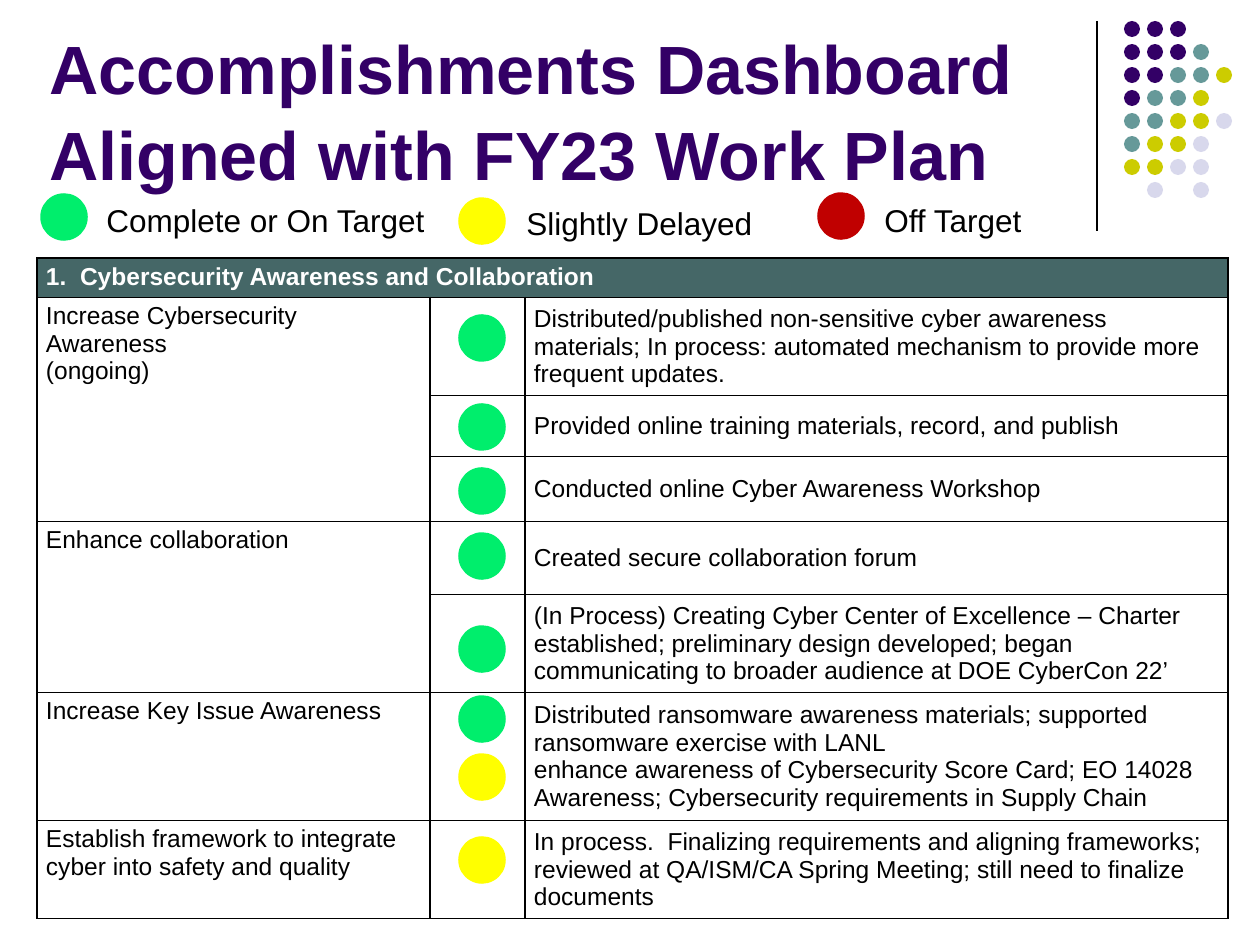
from lxml.etree import SubElement
from pptx import Presentation
from pptx.dml.color import RGBColor
from pptx.enum.shapes import MSO_CONNECTOR, MSO_SHAPE
from pptx.enum.text import MSO_ANCHOR, MSO_AUTO_SIZE, PP_ALIGN
from pptx.oxml.ns import qn
from pptx.util import Emu, Pt

# Content
TITLE = "Accomplishments Dashboard Aligned with FY23 Work Plan"
# label, status, light (x, y), label (x, y, width)
LEGEND = [
    ("Complete or On Target", "done", (42, 195), (94, 195, 346)),
    ("Slightly Delayed", "delayed", (460, 199), (514, 198, 253)),
    ("Off Target", "off", (819, 194), (872, 195, 164)),
]
SECTION = "1.  Cybersecurity Awareness and Collaboration"
# goal, [(accomplishment, row height, [(status, light y)])]
GOALS = [
    ("Increase Cybersecurity Awareness\n(ongoing)", [
        ("Distributed/published non-sensitive cyber awareness materials; In process: "
         "automated mechanism to provide more frequent updates.", 96, [("done", 316)]),
        ("Provided online training materials, record, and publish", 61, [("done", 405)]),
        ("Conducted online Cyber Awareness Workshop", 65, [("done", 469)]),
    ]),
    ("Enhance collaboration", [
        ("Created secure collaboration forum", 73, [("done", 534)]),
        ("(In Process) Creating Cyber Center of Excellence – Charter established; "
         "preliminary design developed; began communicating to broader audience at "
         "DOE CyberCon 22’", 97, [("done", 627)]),
    ]),
    ("Increase Key Issue Awareness", [
        ("Distributed ransomware awareness materials; supported ransomware exercise "
         "with LANL\nenhance awareness of Cybersecurity Score Card; EO 14028 Awareness; "
         "Cybersecurity requirements in Supply Chain", 119,
         [("done", 697), ("delayed", 755)]),
    ]),
    ("Establish framework to integrate cyber into safety and quality", [
        ("In process.  Finalizing requirements and aligning frameworks; reviewed at "
         "QA/ISM/CA Spring Meeting; still need to finalize documents", 92,
         [("delayed", 838)]),
    ]),
]
# Corner ornament: purple, teal, olive, mist; "." is a gap
DOTS = ["PPP", "PPPT", "PPTTO", "PTTO", "TTOOM", "TOOM", "OOMM", ".M.M"]

THEME = {
    "font": "Arial", "title_size": Pt(39), "label_size": Pt(18), "cell_size": Pt(14),
    "title": "330066", "text": "000000", "header": "456767", "paper": "FFFFFF",
    "done": "00EE6C", "delayed": "FFFF00", "off": "C00000",
    "P": "330066", "T": "669999", "O": "CCCC00", "M": "D8D8EC",
}
LIGHT = 44
LIGHT_X = 460
HEADER_HEIGHT = 39
COLUMNS = [393, 95, 703]


def px(n):
    return Emu(round(n * 914400 / 126))


def box(*lengths):
    return [px(n) for n in lengths]


def color(name):
    return RGBColor.from_string(THEME[name])


def style(frame, size, ink="text", bold=False):
    for paragraph in frame.paragraphs:
        paragraph.alignment = PP_ALIGN.LEFT
        font = paragraph.font
        font.name, font.size, font.bold = THEME["font"], THEME[size], bold
        font.color.rgb = color(ink)


def add_circle(slide, x, y, size, fill, outlined=False):
    circle = slide.shapes.add_shape(MSO_SHAPE.OVAL, *box(x, y, size, size))
    circle.shadow.inherit = False
    circle.fill.solid()
    circle.fill.fore_color.rgb = color(fill)
    if outlined:
        circle.line.color.rgb = color(fill)
        circle.line.width = Pt(2)
    else:
        circle.line.fill.background()


def add_borders(cell):
    properties = cell._tc.get_or_add_tcPr()
    for position, side in enumerate(("lnL", "lnR", "lnT", "lnB")):
        border = SubElement(properties, qn("a:" + side), w=str(Pt(1)))
        fill = SubElement(border, qn("a:solidFill"))
        SubElement(fill, qn("a:srgbClr"), val=THEME["text"])
        properties.insert(position, border)


def fill_cell(cell, text="", fill="paper", ink="text", bold=False, anchor=MSO_ANCHOR.TOP):
    cell.text = text
    cell.vertical_anchor = anchor
    cell.margin_left = cell.margin_right = px(9)
    cell.margin_top = cell.margin_bottom = px(5)
    cell.fill.solid()
    cell.fill.fore_color.rgb = color(fill)
    add_borders(cell)
    style(cell.text_frame, "cell_size", ink, bold)


def add_ornament(slide):
    divider = slide.shapes.add_connector(MSO_CONNECTOR.STRAIGHT, *box(1097, 21, 1097, 231))
    divider.line.color.rgb = color("text")
    divider.line.width = Pt(0.75)
    SubElement(divider._element.spPr, qn("a:effectLst"))
    for row, dots in enumerate(DOTS):
        for column, dot in enumerate(dots):
            if dot != ".":
                add_circle(slide, 1124 + 23 * column, 21 + 23 * row, 16, dot)


def add_title(slide):
    title = slide.shapes.title
    title.left, title.top, title.width, title.height = box(37, 136, 1086, 64)
    frame = title.text_frame
    frame.text = TITLE
    frame.word_wrap = True
    frame.auto_size = MSO_AUTO_SIZE.NONE
    frame.vertical_anchor = MSO_ANCHOR.BOTTOM
    style(frame, "title_size", "title", bold=True)
    frame.paragraphs[0].line_spacing = 1.05


def add_legend(slide):
    for text, status, light, (x, y, width) in LEGEND:
        add_circle(slide, *light, LIGHT, status, outlined=True)
        frame = slide.shapes.add_textbox(*box(x, y, width, 50)).text_frame
        frame.text = text
        frame.word_wrap = False
        style(frame, "label_size")


def add_dashboard(slide):
    items = [item for _, group in GOALS for item in group]
    heights = [HEADER_HEIGHT] + [height for _, height, _ in items]
    table = slide.shapes.add_table(len(heights), len(COLUMNS),
                                   *box(37, 258, sum(COLUMNS), sum(heights))).table
    table.first_row = table.horz_banding = False
    for column, width in zip(table.columns, COLUMNS):
        column.width = px(width)
    for row, height in zip(table.rows, heights):
        row.height = px(height)

    # Section heading across all columns
    for column in range(len(COLUMNS)):
        fill_cell(table.cell(0, column), "" if column else SECTION, "header", "paper", True)
    table.cell(0, 0).merge(table.cell(0, len(COLUMNS) - 1))

    # Goals, each spanning its accomplishments
    row = 1
    for goal, group in GOALS:
        first = row
        for accomplishment, _, _ in group:
            fill_cell(table.cell(row, 0), goal if row == first else "")
            fill_cell(table.cell(row, 1))
            fill_cell(table.cell(row, 2), accomplishment, anchor=MSO_ANCHOR.MIDDLE)
            row += 1
        if len(group) > 1:
            table.cell(first, 0).merge(table.cell(row - 1, 0))

    # Status lights over the middle column
    for _, _, lights in items:
        for status, y in lights:
            add_circle(slide, LIGHT_X, y, LIGHT, status, outlined=True)


def main():
    deck = Presentation()
    deck.slide_width, deck.slide_height = box(1260, 945)
    slide = deck.slides.add_slide(deck.slide_layouts[5])
    add_ornament(slide)
    add_title(slide)
    add_legend(slide)
    add_dashboard(slide)
    deck.save("out.pptx")


if __name__ == "__main__":
    main()
